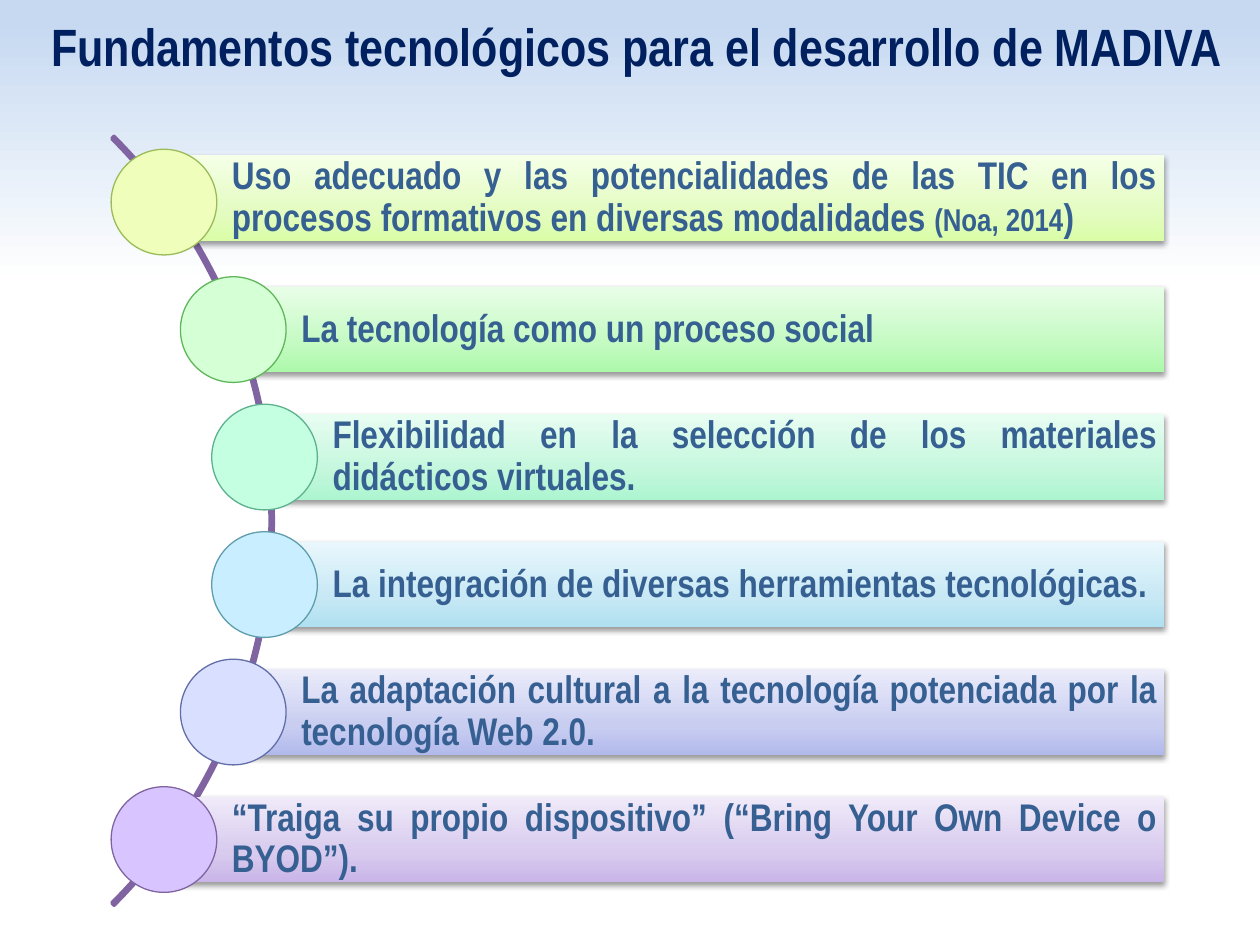
import math

import lxml.etree
import pptx
import pptx.dml.color
import pptx.enum.shapes
import pptx.enum.text
import pptx.oxml.ns
import pptx.util

Cm, Pt = pptx.util.Cm, pptx.util.Pt
qn = pptx.oxml.ns.qn
SHAPE = pptx.enum.shapes.MSO_SHAPE
ALIGN = pptx.enum.text.PP_ALIGN
ANCHOR = pptx.enum.text.MSO_ANCHOR

TITLE = "Fundamentos tecnológicos para el desarrollo de MADIVA"
# text runs (text, size), bar gradient from bottom to top, disc fill, disc line
FOUNDATIONS = [
    ([("Uso adecuado y las potencialidades de las TIC en los procesos formativos "
       "en diversas modalidades ", 22), ("(Noa, 2014", 18), (")", 22)],
     ("DAFDA7", "E4FCC2", "F5FFE7"), "EFFEBA", "9BBB59"),
    ([("La tecnología como un proceso social", 22)],
     ("ACF9AA", "C5FAC3", "E8FEE7"), "D5FFD5", "5FB65B"),
    ([("Flexibilidad en la selección de los materiales didácticos virtuales.", 22)],
     ("ACF5D0", "C5F7DD", "E8FDF2"), "C5FFE2", "5DB18E"),
    ([("La integración de diversas herramientas tecnológicas.", 22)],
     ("AFE0F1", "C7E8F4", "E9F7FC"), "C9EEFF", "5F9DAC"),
    ([("La adaptación cultural a la tecnología potenciada por la tecnología Web 2.0.", 22)],
     ("B2BAEC", "C9CEF1", "EAECFA"), "D9DFFF", "626EA7"),
    ([("“Traiga su propio dispositivo” (“Bring Your Own Device o BYOD”).", 22)],
     ("C9B5E8", "D8CBEE", "F0EAF9"), "D8C5FF", "8064A2"),
]

# Lengths in cm
ARC_X, ARC_Y, ARC_SIZE = -5.45, 10.5, 21.92
DISC_ORBIT = 10.86
DISC_SIZE = 2.13
PITCH = 2.57
BAR_HEIGHT, BAR_RIGHT = 1.73, 23.47
FIRST_BAR_LIFT = 0.08


def color(hex_code):
    return pptx.dml.color.RGBColor.from_string(hex_code)


def set_gradient(fill, owner, stops, angle):
    """Fill with (percent, colour) stops; the angle runs counter-clockwise."""
    fill.gradient()
    fill.gradient_angle = angle
    stop_list = owner.find(".//" + qn("a:gsLst"))
    for old_stop in list(stop_list):
        stop_list.remove(old_stop)
    for percent, hex_code in stops:
        stop = lxml.etree.SubElement(stop_list, qn("a:gs"), pos=str(percent * 1000))
        lxml.etree.SubElement(stop, qn("a:srgbClr"), val=hex_code)


def add_shadow(shape):
    effects = shape.element.spPr.find(qn("a:effectLst"))
    shadow = lxml.etree.SubElement(
        effects, qn("a:outerShdw"), blurRad=str(Pt(3.1)), dist=str(Pt(1.6)),
        dir="5400000", rotWithShape="0")
    black = lxml.etree.SubElement(shadow, qn("a:srgbClr"), val="000000")
    lxml.etree.SubElement(black, qn("a:alpha"), val="38000")


def add_plain_shape(slide, preset, left, top, width, height):
    shape = slide.shapes.add_shape(preset, Cm(left), Cm(top), Cm(width), Cm(height))
    shape.shadow.inherit = False
    return shape


def format_run(run, size, hex_code):
    run.font.name = "Arial Narrow"
    run.font.size = Pt(size)
    run.font.bold = True
    run.font.color.rgb = color(hex_code)


def add_title(slide):
    title = slide.shapes.title
    title.left, title.top, title.width, title.height = Cm(0.69), Cm(0.15), Cm(24.31), Cm(1.55)
    frame = title.text_frame
    frame.text = TITLE
    frame.word_wrap = True
    frame.auto_size = pptx.enum.text.MSO_AUTO_SIZE.SHAPE_TO_FIT_TEXT
    frame.vertical_anchor = ANCHOR.TOP
    frame.paragraphs[0].alignment = ALIGN.CENTER
    format_run(frame.paragraphs[0].runs[0], 30, "002060")


def add_arc(slide):
    arc = add_plain_shape(slide, SHAPE.BLOCK_ARC, ARC_X - ARC_SIZE / 2,
                          ARC_Y - ARC_SIZE / 2, ARC_SIZE, ARC_SIZE)
    for index, value in enumerate((189, 27, 0.003)):
        arc.adjustments[index] = value
    arc.fill.background()
    arc.line.color.rgb = color("8064A2")
    arc.line.width = Pt(2)


def add_bar(slide, left, middle, runs, shades):
    bar = add_plain_shape(slide, SHAPE.RECTANGLE, left, middle - BAR_HEIGHT / 2,
                          BAR_RIGHT - left, BAR_HEIGHT)
    set_gradient(bar.fill, bar.element, zip((0, 35, 100), shades), 90)
    bar.line.fill.background()
    add_shadow(bar)
    frame = bar.text_frame
    frame.word_wrap = True
    frame.vertical_anchor = ANCHOR.MIDDLE
    frame.margin_left = Cm(1.37)
    frame.margin_top = frame.margin_right = frame.margin_bottom = Cm(0.15)
    paragraph = frame.paragraphs[0]
    paragraph.alignment = ALIGN.JUSTIFY
    paragraph.line_spacing = 0.9
    for text, size in runs:
        run = paragraph.add_run()
        run.text = text
        format_run(run, size, "376092")


def add_disc(slide, x, y, fill, line):
    disc = add_plain_shape(slide, SHAPE.OVAL, x - DISC_SIZE / 2, y - DISC_SIZE / 2,
                           DISC_SIZE, DISC_SIZE)
    disc.fill.solid()
    disc.fill.fore_color.rgb = color(fill)
    disc.line.color.rgb = color(line)
    disc.line.width = Pt(0.75)


def main():
    deck = pptx.Presentation()
    deck.slide_width, deck.slide_height = Cm(25.4), Cm(19.05)
    slide = deck.slides.add_slide(deck.slide_layouts.get_by_name("Title Only"))
    set_gradient(slide.background.fill, slide.element, [(2, "C6D9F1"), (30, "FFFFFF")], 270)
    add_title(slide)
    add_arc(slide)
    for index, (runs, shades, fill, line) in enumerate(FOUNDATIONS):
        rise = (index - (len(FOUNDATIONS) - 1) / 2) * PITCH
        x, y = ARC_X + math.sqrt(DISC_ORBIT ** 2 - rise ** 2), ARC_Y + rise
        lift = FIRST_BAR_LIFT if index == 0 else 0
        add_bar(slide, x, y - lift, runs, shades)
        add_disc(slide, x, y, fill, line)
    deck.save("out.pptx")


if __name__ == "__main__":
    main()
